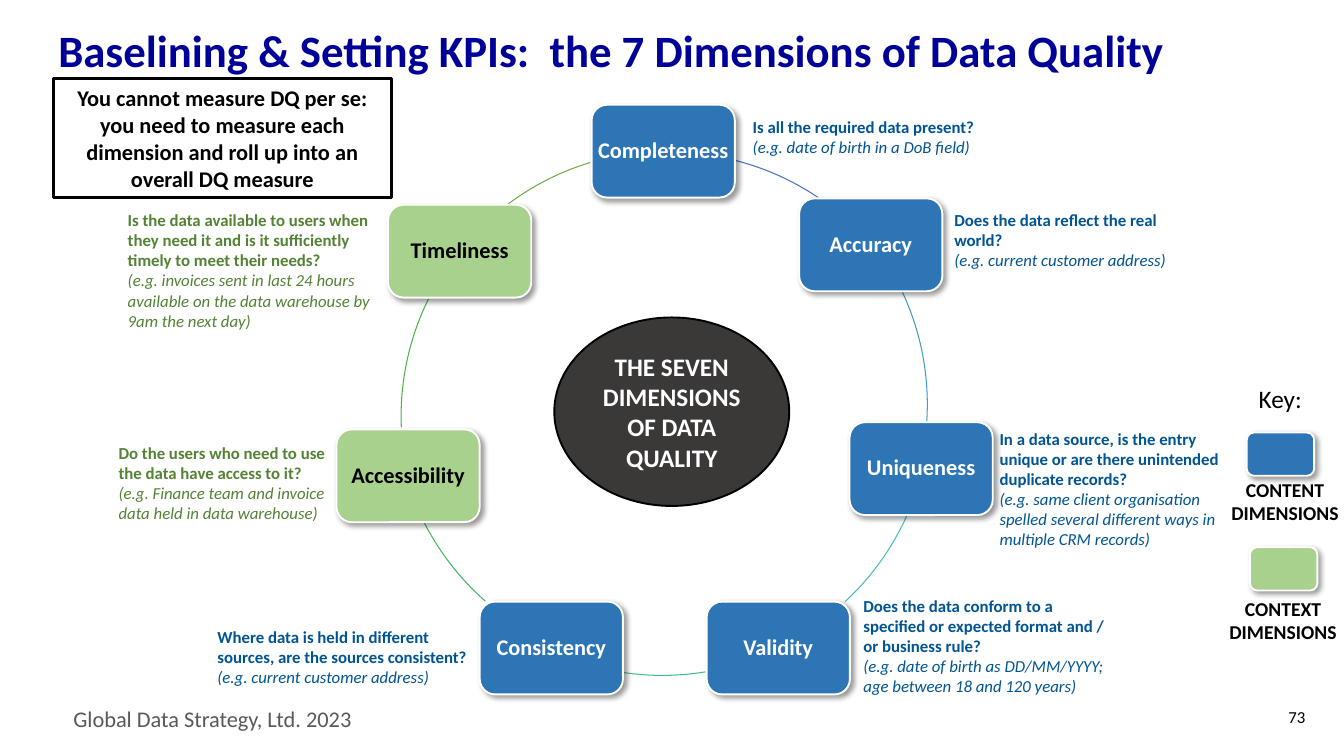
from lxml.etree import SubElement
from pptx import Presentation
from pptx.dml.color import RGBColor
from pptx.enum.shapes import MSO_SHAPE as Preset
from pptx.enum.text import MSO_ANCHOR as Anchor, PP_ALIGN as Align
from pptx.oxml.ns import qn
from pptx.util import Cm, Pt

COLOURS = {
    "title": "000099", "black": "000000", "white": "FFFFFF", "footer": "595959",
    "content": "2E75B6", "context": "A9D18E", "hub": "3B3838",
    "content_note": "005493", "context_note": "548235",
}
LABEL_COLOURS = {"content": "white", "context": "black"}
BOX_SIZE = (3.61, 2.34)
SWATCH_SIZE = (1.7, 1.09)
RING_SIZE = 13.36

# name, kind, box position, note area, question, example
DIMENSIONS = [
    ("Completeness", "content", (14.91, 2.64), (18.72, 2.82, 6.88, 1.27),
     "Is all the required data present?",
     "(e.g. date of birth in a DoB field)"),
    ("Accuracy", "content", (20.14, 5), (23.8, 5.16, 6.88, 1.8),
     "Does the data reflect the real world?",
     "(e.g. current customer address)"),
    ("Uniqueness", "content", (21.41, 10.64), (24.94, 10.67, 6.1, 3.33),
     "In a data source, is the entry unique or are there unintended duplicate records?",
     "(e.g. same client organisation spelled several different ways in multiple CRM records)"),
    ("Validity", "content", (17.81, 15.16), (21.51, 14.88, 6.88, 2.82),
     "Does the data conform to a specified or expected format and / or business rule?",
     "(e.g. date of birth as DD/MM/YYYY; age between 18 and 120 years)"),
    ("Consistency", "content", (12.09, 15.16), (5.23, 15.67, 6.88, 1.8),
     "Where data is held in different sources, are the sources consistent?",
     "(e.g. current customer address)"),
    ("Accessibility", "context", (8.48, 10.82), (2.74, 11.02, 5.74, 2.31),
     "Do the users who need to use the data have access to it?",
     "(e.g. Finance team and invoice data held in data warehouse)"),
    ("Timeliness", "context", (9.78, 5.16), (2.97, 5.16, 6.88, 3.33),
     "Is the data available to users when they need it and is it sufficiently timely "
     "to meet their needs?",
     "(e.g. invoices sent in last 24 hours available on the data warehouse by 9am the next day)"),
]

# circle left and top, start and end angle clockwise from the right, colour
RING_ARCS = [
    (10.21, 3.84, 284.3, 304, "4472C4"),
    (10.01, 3.51, 335, 3.7, "449BC1"),
    (10.08, 3.58, 24.2, 47.2, "43BEB9"),
    (10.01, 3.66, 80.6, 98.3, "43BB8D"),
    (9.96, 3.45, 131.3, 152.9, "45B664"),
    (10.11, 3.81, 177.6, 206.3, "4CB146"),
    (10.13, 3.81, 233, 253.2, "70AD47"),
]

# kind, swatch position, caption area, caption
KEY_ENTRIES = [
    ("content", (31.42, 10.9), (30.76, 11.91, 3.25, 1.45), "CONTENT\nDIMENSIONS"),
    ("context", (31.5, 13.79), (30.71, 14.91, 3.25, 1.45), "CONTEXT\nDIMENSIONS"),
]


class SlideBuilder:
    font_name = "Calibri"

    def __init__(self, slide):
        self.slide = slide

    def set_text(self, shape, text, size, colour, bold=False, align=Align.LEFT, spacing=None):
        """Fill the shape with one paragraph for each line of text."""
        shape.text_frame.text = text
        for paragraph in shape.text_frame.paragraphs:
            paragraph.alignment = align
            paragraph.line_spacing = spacing
            for run in paragraph.runs:
                run.font.name = self.font_name
                run.font.size = Pt(size)
                run.font.bold = bold
                run.font.color.rgb = RGBColor.from_string(COLOURS[colour])

    def text(self, area, text, size, colour, wrap=True, anchor=Anchor.TOP, **style):
        box = self.slide.shapes.add_textbox(*map(Cm, area))
        box.text_frame.word_wrap = wrap
        box.text_frame.vertical_anchor = anchor
        self.set_text(box, text, size, colour, **style)
        return box

    def shape(self, preset, area, fill, line, width):
        """Add a shape; fill and line are hex strings, no fill leaves it open."""
        shape = self.slide.shapes.add_shape(preset, *map(Cm, area))
        shape.shadow.inherit = False
        if fill:
            shape.fill.solid()
            shape.fill.fore_color.rgb = RGBColor.from_string(fill)
        else:
            shape.fill.background()
        shape.line.color.rgb = RGBColor.from_string(line)
        shape.line.width = Pt(width)
        shape.text_frame.word_wrap = True
        shape.text_frame.vertical_anchor = Anchor.MIDDLE
        return shape

    def card(self, position, size, kind):
        """Add a rounded rectangle with a soft shadow."""
        card = self.shape(Preset.ROUNDED_RECTANGLE, position + size,
                          COLOURS[kind], COLOURS["white"], 1.35)
        effects = card._element.spPr.find(qn("a:effectLst"))
        shadow = SubElement(effects, qn("a:outerShdw"), blurRad=str(Pt(4)),
                            dist=str(Pt(3)), dir=str(45 * 60000), rotWithShape="0")
        shade = SubElement(shadow, qn("a:srgbClr"), val=COLOURS["black"])
        SubElement(shade, qn("a:alpha"), val="40000")
        return card

    def dimension(self, name, kind, position):
        card = self.card(position, BOX_SIZE, kind)
        card.text_frame.margin_left = card.text_frame.margin_right = 0
        self.set_text(card, name, 16, LABEL_COLOURS[kind], bold=True,
                      align=Align.CENTER, spacing=0.9)

    def note(self, area, kind, question, example):
        box = self.text(area, f"{question}\n{example}", 12, f"{kind}_note", bold=True)
        example_font = box.text_frame.paragraphs[1].runs[0].font
        example_font.bold = False
        example_font.italic = True

    def arc(self, left, top, start, end, colour):
        arc = self.shape(Preset.ARC, (left, top, RING_SIZE, RING_SIZE), None, colour, 0.75)
        for index, angle in enumerate((start, end)):
            arc.adjustments[index] = angle * 60000 / 100000


def main():
    presentation = Presentation()
    presentation.slide_width, presentation.slide_height = Cm(33.87), Cm(19.05)
    builder = SlideBuilder(presentation.slides.add_slide(presentation.slide_layouts[6]))

    builder.text((1.6, 17.65, 9.19, 0.94), "Global Data Strategy, Ltd. 2023", 16, "footer")
    builder.text((1.22, 0.46, 29.21, 1.73),
                 "Baselining & Setting KPIs:  the 7 Dimensions of Data Quality",
                 32, "title", anchor=Anchor.MIDDLE, bold=True, spacing=0.9)

    for arc in RING_ARCS:
        builder.arc(*arc)
    for name, kind, position, note_area, question, example in DIMENSIONS:
        builder.dimension(name, kind, position)
        builder.note(note_area, kind, question, example)

    builder.text((31.47, 9.53, 1.63, 1.02), "Key:", 18, "black", wrap=False)
    for kind, position, caption_area, caption in KEY_ENTRIES:
        builder.card(position, SWATCH_SIZE, kind)
        builder.text(caption_area, caption, 14, "black", wrap=False,
                     bold=True, align=Align.CENTER)

    hub = builder.shape(Preset.OVAL, (13.97, 8, 5.92, 4.75),
                        COLOURS["hub"], COLOURS["black"], 1.35)
    builder.set_text(hub, "THE SEVEN DIMENSIONS OF DATA QUALITY", 18, "white",
                     bold=True, align=Align.CENTER)
    statement = builder.shape(Preset.RECTANGLE, (1.35, 1.98, 8.51, 3),
                              None, COLOURS["black"], 2.25)
    builder.set_text(statement, "You cannot measure DQ per se: you need to measure each "
                     "dimension and roll up into an overall DQ measure",
                     16, "black", bold=True, align=Align.CENTER)
    builder.text((31.55, 17.68, 1.6, 1.02), "73", 12, "black", align=Align.RIGHT)

    presentation.save("out.pptx")


if __name__ == "__main__":
    main()
